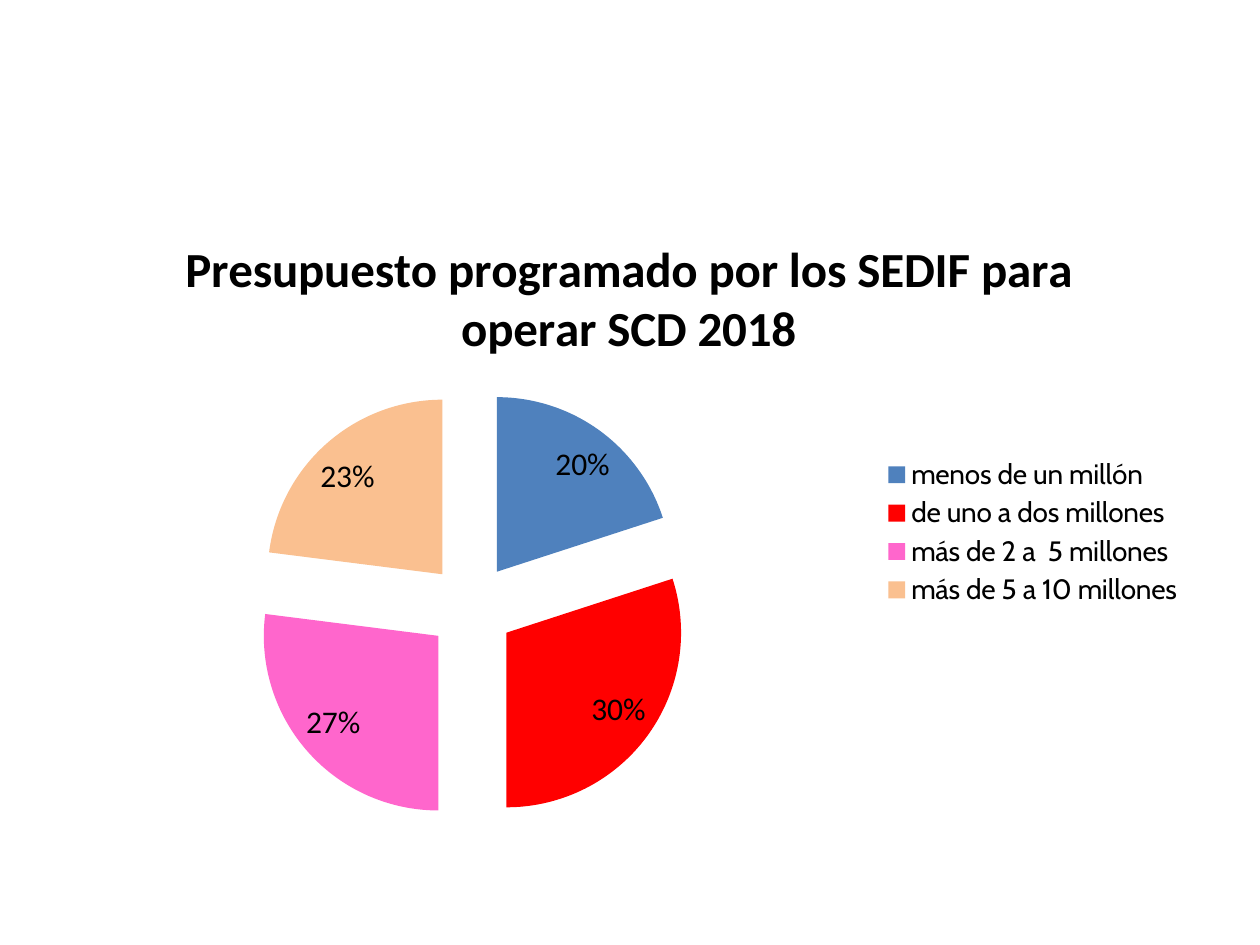
from lxml import etree
from pptx import Presentation
from pptx.chart.data import CategoryChartData
from pptx.dml.color import RGBColor
from pptx.enum.chart import XL_CHART_TYPE, XL_LABEL_POSITION, XL_LEGEND_POSITION
from pptx.oxml.ns import qn
from pptx.util import Inches, Pt

PIE = XL_CHART_TYPE.PIE
BEST_FIT = XL_LABEL_POSITION.BEST_FIT
RIGHT = XL_LEGEND_POSITION.RIGHT

COLORS = {
    "text": "000000",
    "blue": "4F81BD",
    "red": "FF0000",
    "pink": "FF66CC",
    "peach": "FAC090",
}
BUDGET_SHARES = [
    ("menos de un millón", 20, "blue"),
    ("de uno a dos millones", 30, "red"),
    ("más de 2 a  5 millones", 27, "pink"),
    ("más de 5 a 10 millones", 23, "peach"),
]


class BudgetSlide:
    body_font = "Calibri"
    legend_font = "Cabin"

    def __init__(self, presentation):
        self.width = presentation.slide_width
        self.height = presentation.slide_height
        self.slide = presentation.slides.add_slide(presentation.slide_layouts[6])

    def style_font(self, font, size, name=body_font, bold=False):
        font.size = Pt(size)
        font.name = name
        font.bold = bold
        font.color.rgb = RGBColor.from_string(COLORS["text"])

    def add_pie(self, title, shares, box, title_corner, plot_box, explosion):
        data = CategoryChartData()
        data.categories = [name for name, _, _ in shares]
        data.add_series("Series 1", [value for _, value, _ in shares])
        left, top, width, height = box
        chart = self.slide.shapes.add_chart(
            PIE,
            int(left * self.width),
            int(top * self.height),
            int(width * self.width),
            int(height * self.height),
            data,
        ).chart
        self.style_font(chart.font, 10)
        self.set_title(chart, title, title_corner)
        self.set_legend(chart)
        self.set_slices(chart.plots[0].series[0], shares, explosion)
        self.set_labels(chart.plots[0])
        plot_area = chart._chartSpace.chart.plotArea
        self.set_layout(plot_area, 0, plot_box, [("layoutTarget", "inner")])

    def set_title(self, chart, title, corner):
        chart.has_title = True
        chart.chart_title.include_in_layout = False
        paragraph = chart.chart_title.text_frame.paragraphs[0]
        paragraph.text = title
        self.style_font(paragraph.runs[0].font, 28, bold=True)
        self.set_layout(chart.chart_title._element, 1, corner)

    def set_legend(self, chart):
        chart.has_legend = True
        chart.legend.position = RIGHT
        chart.legend.include_in_layout = False
        self.style_font(chart.legend.font, 16, self.legend_font)

    def set_slices(self, series, shares, explosion):
        element = etree.Element(qn("c:explosion"), val=str(explosion))
        series._element.find(qn("c:tx")).addnext(element)
        for index, (_, _, color) in enumerate(shares):
            fill = series.points[index].format.fill
            fill.solid()
            fill.fore_color.rgb = RGBColor.from_string(COLORS[color])

    def set_labels(self, plot):
        plot.vary_by_categories = True
        plot.has_data_labels = True
        labels = plot.data_labels
        labels.show_percentage = True
        labels.show_value = False
        labels.number_format = "0%"
        labels.number_format_is_linked = False
        labels.position = BEST_FIT
        self.style_font(labels.font, 18)

    def set_layout(self, parent, index, numbers, target=()):
        layout = parent.find(qn("c:layout"))
        if layout is None:
            layout = etree.Element(qn("c:layout"))
            parent.insert(index, layout)
        manual = etree.SubElement(layout, qn("c:manualLayout"))
        settings = [*target, ("xMode", "edge"), ("yMode", "edge")]
        settings += zip("xywh", numbers)
        for name, value in settings:
            etree.SubElement(manual, qn(f"c:{name}"), val=str(value))


def main():
    presentation = Presentation()
    presentation.slide_width = Inches(10)
    presentation.slide_height = Inches(7.5)
    budget = BudgetSlide(presentation)
    budget.add_pie(
        "Presupuesto programado por los SEDIF para operar SCD 2018",
        BUDGET_SHARES,
        box=(0.05, 1.75 / 7.5, 0.9, 0.66),
        title_corner=(0.1, 0.01),
        plot_box=(0.16, 0.27, 0.4, 0.7),
        explosion=25,
    )
    presentation.save("out.pptx")


if __name__ == "__main__":
    main()
